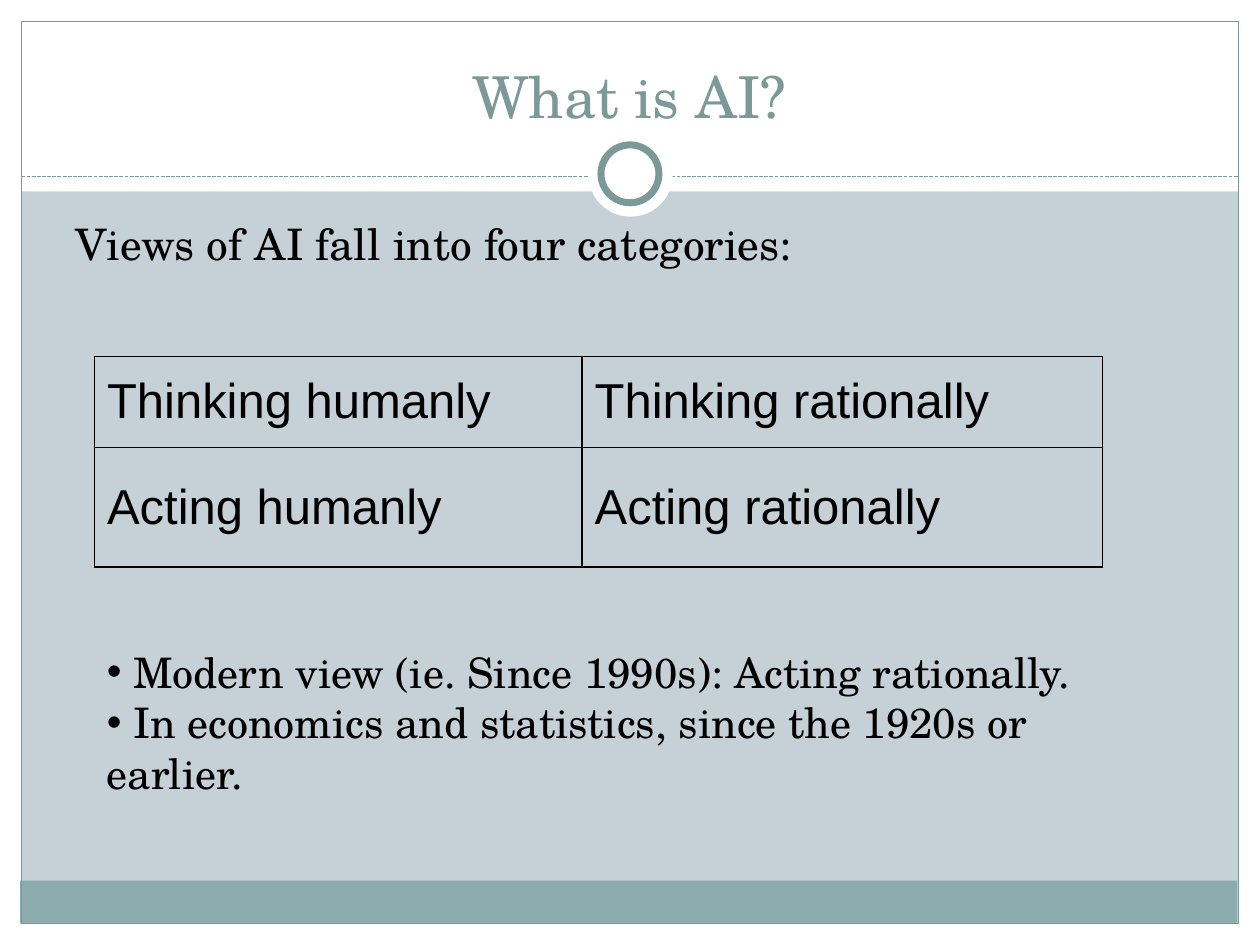
from dataclasses import dataclass

from lxml.etree import SubElement
from pptx import Presentation
from pptx.dml.color import RGBColor
from pptx.enum.dml import MSO_LINE
from pptx.enum.shapes import MSO_CONNECTOR, MSO_SHAPE
from pptx.enum.text import MSO_ANCHOR, MSO_AUTO_SIZE, PP_ALIGN
from pptx.oxml.ns import qn
from pptx.util import Inches, Pt

SERIF = "TeX Gyre Schola"
SANS = "Arial"
WHITE = "FFFFFF"
BLACK = "000000"
TEAL = "7C999A"


@dataclass
class Box:
    left: float
    top: float
    width: float
    height: float

    def size(self) -> list:
        return [Inches(n) for n in (self.left, self.top, self.width, self.height)]


@dataclass
class Part:
    box: Box
    fill: str = ""
    line: str = ""
    weight: float = 0.75
    kind: MSO_SHAPE = MSO_SHAPE.RECTANGLE


def color(code: str) -> RGBColor:
    return RGBColor.from_string(code)


def draw(slide, part: Part) -> None:
    shape = slide.shapes.add_shape(part.kind, *part.box.size())
    shape.shadow.inherit = False
    if part.fill:
        shape.fill.solid()
        shape.fill.fore_color.rgb = color(part.fill)
    else:
        shape.fill.background()
    if part.line:
        shape.line.color.rgb = color(part.line)
        shape.line.width = Pt(part.weight)
    else:
        shape.line.fill.background()


def rule(slide, left: float, right: float, top: float) -> None:
    line = slide.shapes.add_connector(
        MSO_CONNECTOR.STRAIGHT, Inches(left), Inches(top), Inches(right), Inches(top))
    line.line.color.rgb = color(TEAL)
    line.line.width = Pt(0.75)
    line.line.dash_style = MSO_LINE.SQUARE_DOT
    SubElement(line.element.spPr, qn("a:effectLst"))


def write(para, text: str, size: float, font: str = SERIF, code: str = BLACK) -> None:
    run = para.add_run()
    run.text = text
    run.font.size = Pt(size)
    run.font.name = font
    run.font.color.rgb = color(code)


def bullet(para) -> None:
    props = para._p.get_or_add_pPr()
    SubElement(props, qn("a:buFont"), typeface=SANS)
    SubElement(props, qn("a:buChar"), char="•")


def text_box(slide, box: Box, fit: MSO_AUTO_SIZE):
    frame = slide.shapes.add_textbox(*box.size()).text_frame
    frame.word_wrap = True
    frame.auto_size = fit
    return frame


def border(cell) -> None:
    props = cell._tc.get_or_add_tcPr()
    for spot, side in enumerate(("lnL", "lnR", "lnT", "lnB")):
        line = props.makeelement(qn(f"a:{side}"), {"w": str(Pt(1))})
        props.insert(spot, line)
        fill = SubElement(line, qn("a:solidFill"))
        SubElement(fill, qn("a:srgbClr"), val=BLACK)


def grid(slide, box: Box, cols: list[float], rows: list[float],
         words: list[list[str]]) -> None:
    table = slide.shapes.add_table(len(rows), len(cols), *box.size()).table
    table.first_row = False
    table.horz_banding = False
    for col, width in zip(table.columns, cols):
        col.width = Inches(width)
    for row, height, texts in zip(table.rows, rows, words):
        row.height = Inches(height)
        for cell, text in zip(row.cells, texts):
            cell.fill.background()
            cell.vertical_anchor = MSO_ANCHOR.MIDDLE
            para = cell.text_frame.paragraphs[0]
            para.space_before = Pt(5.6)
            write(para, text, 28, SANS)
            border(cell)


def head(slide, box: Box, text: str) -> None:
    title = slide.shapes.title
    title.left, title.top, title.width, title.height = box.size()
    slide.shapes.element.append(title.element)
    frame = title.text_frame
    frame.auto_size = MSO_AUTO_SIZE.NONE
    frame.vertical_anchor = MSO_ANCHOR.BOTTOM
    para = frame.paragraphs[0]
    para.alignment = PP_ALIGN.CENTER
    write(para, text, 33, code=TEAL)


def main() -> None:
    deck = Presentation()
    deck.slide_width, deck.slide_height = Inches(10), Inches(7.5)
    slide = deck.slides.add_slide(deck.slide_layouts[5])
    back = slide.background.fill
    back.solid()
    back.fore_color.rgb = color("C5D1D7")

    for part in (
        Part(Box(0, 7.33, 10, 0.17), WHITE),
        Part(Box(0, 0, 10, 1.52), WHITE),
        Part(Box(0, 0, 0.17, 7.5), WHITE),
        Part(Box(9.83, 0, 0.17, 7.5), WHITE),
        Part(Box(0.16, 6.99, 9.66, 0.34), "8CADAE"),
        Part(Box(0.17, 0.17, 9.66, 7.16), line=TEAL),
    ):
        draw(slide, part)
    rule(slide, 0.17, 9.83, 1.4)
    draw(slide, Part(Box(4.67, 1.05, 0.67, 0.67), WHITE, kind=MSO_SHAPE.OVAL))
    draw(slide, Part(Box(4.77, 1.15, 0.46, 0.46), WHITE, TEAL, 4, MSO_SHAPE.OVAL))

    head(slide, Box(0.33, 0.25, 9.33, 0.83), "What is AI?")

    lead = text_box(slide, Box(0.5, 1.75, 9, 3.42), MSO_AUTO_SIZE.NONE).paragraphs[0]
    lead.line_spacing = 0.8
    lead.space_before = Pt(5)
    write(lead, "Views of AI fall into four categories:", 24.8)

    grid(slide, Box(0.75, 2.83, 8, 1.67), [3.87, 4.13], [0.72, 0.95], [
        [f"{verb} {way}" for way in ("humanly", "rationally")]
        for verb in ("Thinking", "Acting")
    ])

    notes = text_box(slide, Box(0.75, 5.08, 8.17, 1.31), MSO_AUTO_SIZE.SHAPE_TO_FIT_TEXT)
    for spot, text in enumerate((
        " Modern view (ie. Since 1990s): Acting rationally.",
        " In economics and statistics, since the 1920s or earlier.",
    )):
        para = notes.add_paragraph() if spot else notes.paragraphs[0]
        bullet(para)
        write(para, text, 24)

    deck.save("out.pptx")


if __name__ == "__main__":
    main()
